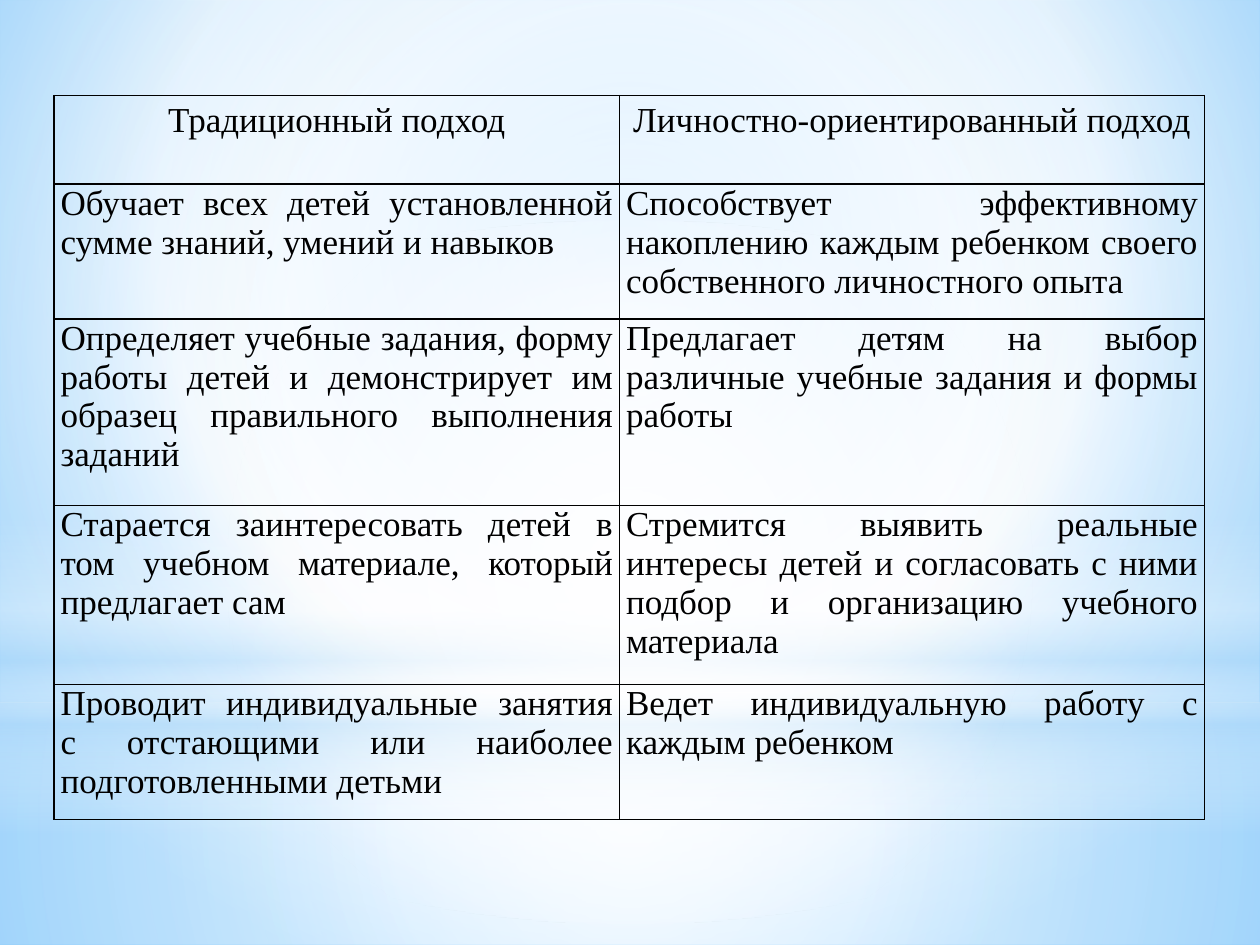
from dataclasses import dataclass

from lxml import etree
from pptx import Presentation
from pptx.dml.color import RGBColor
from pptx.enum.shapes import MSO_SHAPE
from pptx.enum.text import PP_ALIGN
from pptx.oxml.ns import qn
from pptx.util import Cm, Pt

RECT, OVAL = MSO_SHAPE.RECTANGLE, MSO_SHAPE.OVAL
CENTER, JUSTIFY = PP_ALIGN.CENTER, PP_ALIGN.JUSTIFY
BLANK = 6
WIDTH, HEIGHT = 25.4, 19.05
MIDDLE = (50, 50, 50, 50)


@dataclass(frozen=True)
class Theme:
    font: str = "Times New Roman"
    size: float = 20
    ink: str = "000000"
    border: float = 1
    white: str = "FFFFFF"
    haze: str = "B4DCFA"
    sky: str = "9ED5FF"
    deep: str = "5BB9FF"


THEME = Theme()
W, H = THEME.white, THEME.haze

# Gradient stops: position %, colour, opacity %
BACKGROUND = [(0, THEME.sky, 100), (60, W, 100), (100, THEME.deep, 100)]
LOWER_GLOW = [(0, W, 91), (37, W, 76), (100, H, 79)]
UPPER_GLOW = [(0, W, 89), (48, W, 62), (100, H, 79)]
WAVE = [(0, W, 0), (29, W, 30), (45, H, 40), (55, W, 26), (65, H, 60), (100, W, 0)]
HALO = [(0, W, 100), (56, W, 0)]

HORIZON = 14.17
LAYERS = [
    (RECT, (0, HORIZON, WIDTH, HEIGHT - HORIZON), LOWER_GLOW, MIDDLE),
    (RECT, (0, 0, WIDTH, HORIZON), UPPER_GLOW, MIDDLE),
    (RECT, (0, 10.46, WIDTH, 6.35), WAVE, None),
    (OVAL, (0, 4.45, WIDTH, HORIZON), HALO, MIDDLE),
]

COLUMNS = [11.4, 11.79]
ROWS = [1.78, 2.72, 3.76, 3.61, 2.72]
APPROACHES = [
    ("Традиционный подход", "Личностно-ориентированный подход"),
    ("Обучает всех детей установленной сумме знаний, умений и навыков",
     "Способствует эффективному накоплению каждым ребенком своего "
     "собственного личностного опыта"),
    ("Определяет учебные задания, форму работы детей и демонстрирует им "
     "образец правильного выполнения заданий",
     "Предлагает детям на выбор различные учебные задания и формы работы"),
    ("Старается заинтересовать детей в том учебном материале, который "
     "предлагает сам",
     "Стремится выявить реальные интересы детей и согласовать с ними подбор "
     "и организацию учебного материала"),
    ("Проводит индивидуальные занятия с отстающими или наиболее "
     "подготовленными детьми",
     "Ведет индивидуальную работу с каждым ребенком"),
]
HEADER_FORMAT = {"alignment": CENTER, "line_spacing": 1.15}
BODY_FORMAT = {"alignment": JUSTIFY}
CELL_MARGINS = {"margin_left": Cm(0.13), "margin_right": Cm(0.13),
                "margin_top": 0, "margin_bottom": 0}


def set_attrs(obj, values):
    for name, value in values.items():
        setattr(obj, name, value)


def add_xml(parent, tag, **attrs):
    return etree.SubElement(parent, qn(tag), {k: str(v) for k, v in attrs.items()})


def add_color(parent, color, opacity=100):
    clr = add_xml(parent, "a:srgbClr", val=color)
    if opacity < 100:
        add_xml(clr, "a:alpha", val=opacity * 1000)


class SlideBuilder:
    def __init__(self, prs, theme):
        self.theme = theme
        self.s = prs.slides.add_slide(prs.slide_layouts[BLANK])

    def gradient(self, fill, owner, stops, focus):
        """Fill radially towards the focus insets, or downwards if there are none."""
        fill.gradient()
        grad = owner.find(".//" + qn("a:gradFill"))
        for child in list(grad):
            grad.remove(child)
        stop_list = add_xml(grad, "a:gsLst")
        for pos, color, opacity in stops:
            add_color(add_xml(stop_list, "a:gs", pos=pos * 1000), color, opacity)
        if focus:
            insets = {side: inset * 1000 for side, inset in zip("ltrb", focus)}
            add_xml(add_xml(grad, "a:path", path="circle"), "a:fillToRect", **insets)
        else:
            add_xml(grad, "a:lin", ang=90 * 60000, scaled=0)

    def background(self, stops, focus):
        self.gradient(self.s.background.fill, self.s._element, stops, focus)

    def layer(self, kind, box, stops, focus):
        sp = self.s.shapes.add_shape(kind, *map(Cm, box))
        sp.shadow.inherit = False
        sp.line.fill.background()
        self.gradient(sp.fill, sp._element, stops, focus)

    def cell(self, cell, text, paragraph_format):
        set_attrs(cell, CELL_MARGINS)
        tc_pr = cell._tc.get_or_add_tcPr()
        for side in "LRTB":
            ln = add_xml(tc_pr, f"a:ln{side}", w=Pt(self.theme.border))
            add_color(add_xml(ln, "a:solidFill"), self.theme.ink)
        cell.fill.background()
        p = cell.text_frame.paragraphs[0]
        set_attrs(p, paragraph_format)
        r = p.add_run()
        r.text = text
        set_attrs(r.font, {"name": self.theme.font, "size": Pt(self.theme.size),
                           "bold": False})
        r.font.color.rgb = RGBColor.from_string(self.theme.ink)

    def table(self, left, top, columns, rows, texts):
        box = (left, top, sum(columns), sum(rows))
        table = self.s.shapes.add_table(len(rows), len(columns), *map(Cm, box)).table
        set_attrs(table, {"first_row": False, "horz_banding": False})
        for column, width in zip(table.columns, columns):
            column.width = Cm(width)
        for i, (row, height) in enumerate(zip(table.rows, rows)):
            row.height = Cm(height)
            for cell, text in zip(row.cells, texts[i]):
                self.cell(cell, text, BODY_FORMAT if i else HEADER_FORMAT)


def main():
    prs = Presentation()
    set_attrs(prs, {"slide_width": Cm(WIDTH), "slide_height": Cm(HEIGHT)})
    slide = SlideBuilder(prs, THEME)
    slide.background(BACKGROUND, (20, 10, 20, 60))
    for layer in LAYERS:
        slide.layer(*layer)
    slide.table(1.09, 1.93, COLUMNS, ROWS, APPROACHES)
    prs.save("out.pptx")


if __name__ == "__main__":
    main()
